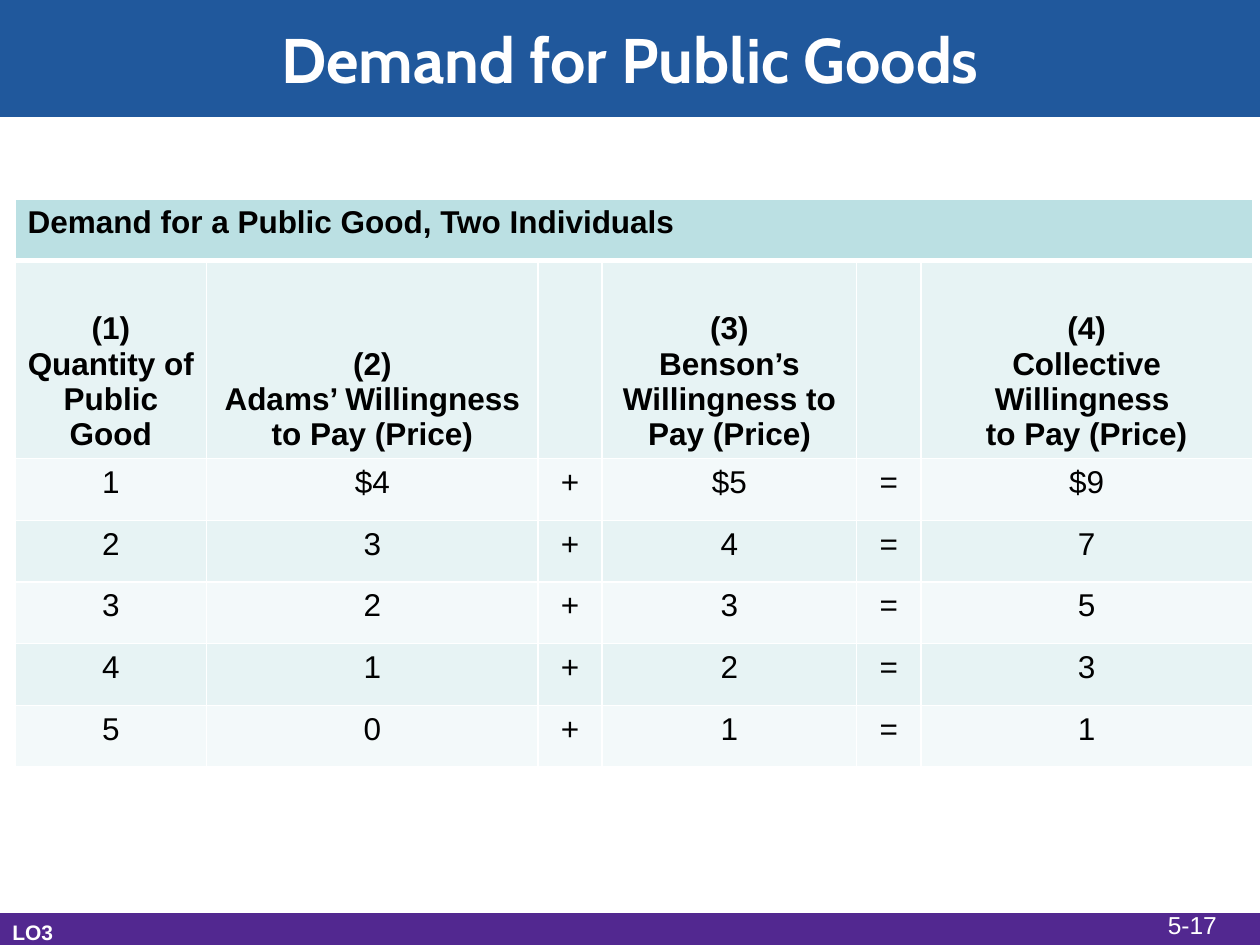
import pptx
import pptx.dml.color
import pptx.enum.shapes
import pptx.enum.text
import pptx.oxml
import pptx.oxml.ns
import pptx.util
from dataclasses import dataclass

Inches = pptx.util.Inches
Pt = pptx.util.Pt
Align = pptx.enum.text.PP_ALIGN
Anchor = pptx.enum.text.MSO_ANCHOR


@dataclass(frozen=True)
class Theme:
    title_font: str = "Cabin"
    body_font: str = "Arial"
    title_size: int = 36
    table_size: int = 18
    number_size: int = 14
    objective_size: int = 12
    title_band: str = "20589C"
    footer_band: str = "522890"
    caption_fill: str = "BBE0E3"
    dark_row: str = "E7F3F4"
    light_row: str = "F3F9FA"
    white: str = "FFFFFF"
    black: str = "000000"


THEME = Theme()
CAPTION = "Demand for a Public Good, Two Individuals"
HEADINGS = [
    "(1)\nQuantity of Public Good",
    "(2)\nAdams’ Willingness to Pay (Price)",
    "",
    "(3)\nBenson’s Willingness to Pay (Price)",
    "",
    "(4)\nCollective Willingness \nto Pay (Price)",
]
DEMAND = [
    ["1", "$4", "+", "$5", "=", "$9"],
    ["2", "3", "+", "4", "=", "7"],
    ["3", "2", "+", "3", "=", "5"],
    ["4", "1", "+", "2", "=", "3"],
    ["5", "0", "+", "1", "=", "1"],
]
COLUMN_WIDTHS = [1.52, 2.63, 0.51, 2.02, 0.51, 2.63]
ROW_HEIGHTS = [0.49, 1.57] + [0.49] * len(DEMAND)


def rgb(value):
    return pptx.dml.color.RGBColor.from_string(value)


def write_text(frame, text, size, color, font=THEME.body_font, bold=False, align=Align.LEFT):
    frame.text = text
    for paragraph in frame.paragraphs:
        paragraph.alignment = align
        paragraph.font.size = Pt(size)
        for run in paragraph.runs:
            run.font.name = font
            run.font.size = Pt(size)
            run.font.bold = bold
            run.font.color.rgb = rgb(color)


def add_band(slide, top, height, color):
    """Draw a full-width coloured strip."""
    band = slide.shapes.add_shape(
        pptx.enum.shapes.MSO_SHAPE.RECTANGLE, 0, Inches(top), Inches(10), Inches(height))
    band.shadow.inherit = False
    band.fill.solid()
    band.fill.fore_color.rgb = rgb(color)
    band.line.color.rgb = rgb(color)
    band.line.width = Pt(0.75)


def add_label(slide, box, text, size, wrap=False, anchor=Anchor.TOP, **style):
    frame = slide.shapes.add_textbox(*map(Inches, box)).text_frame
    frame.word_wrap = wrap
    frame.vertical_anchor = anchor
    write_text(frame, text, size, THEME.white, **style)


def set_borders(cell, top=1, bottom=1):
    """Rule all four sides in white; widths are in points."""
    properties = cell._tc.get_or_add_tcPr()
    for side, width in (("L", 1), ("R", 1), ("T", top), ("B", bottom)):
        properties.append(pptx.oxml.parse_xml(
            f'<a:ln{side} {pptx.oxml.ns.nsdecls("a")} w="{Pt(width)}">'
            f'<a:solidFill><a:srgbClr val="{THEME.white}"/></a:solidFill></a:ln{side}>'))


def fill_cell(cell, text, fill, top=1, bottom=1, anchor=Anchor.TOP, **style):
    set_borders(cell, top, bottom)
    cell.fill.solid()
    cell.fill.fore_color.rgb = rgb(fill)
    cell.vertical_anchor = anchor
    write_text(cell.text_frame, text, THEME.table_size, THEME.black, **style)


def add_demand_table(slide):
    table = slide.shapes.add_table(
        len(ROW_HEIGHTS), len(COLUMN_WIDTHS), Inches(0.12), Inches(1.58),
        Inches(sum(COLUMN_WIDTHS)), Inches(sum(ROW_HEIGHTS))).table
    table.first_row = table.horz_banding = False
    for column, width in zip(table.columns, COLUMN_WIDTHS):
        column.width = Inches(width)
    for row, height in zip(table.rows, ROW_HEIGHTS):
        row.height = Inches(height)

    table.cell(0, 0).merge(table.cell(0, len(COLUMN_WIDTHS) - 1))
    for cell in table.rows[0].cells:
        caption = "" if cell.is_spanned else CAPTION
        fill_cell(cell, caption, THEME.caption_fill, bottom=3, bold=True)
    for cell, heading in zip(table.rows[1].cells, HEADINGS):
        fill_cell(cell, heading, THEME.dark_row, top=3, anchor=Anchor.BOTTOM,
                  bold=True, align=Align.CENTER)
    for index, values in enumerate(DEMAND):
        fill = THEME.dark_row if index % 2 else THEME.light_row
        for cell, value in zip(table.rows[index + 2].cells, values):
            fill_cell(cell, value, fill, align=Align.CENTER)


def main():
    deck = pptx.Presentation()
    deck.slide_width, deck.slide_height = Inches(10), Inches(7.5)
    slide = deck.slides.add_slide(deck.slide_layouts[6])

    add_band(slide, 0, 0.92, THEME.title_band)
    add_label(slide, (0, 0, 10, 0.92), "Demand for Public Goods", THEME.title_size,
              wrap=True, anchor=Anchor.MIDDLE, font=THEME.title_font,
              bold=True, align=Align.CENTER)
    add_band(slide, 7.25, 0.25, THEME.footer_band)
    add_label(slide, (0, 7.25, 0.53, 0.3), "LO3", THEME.objective_size, bold=True)
    add_demand_table(slide)
    add_label(slide, (9.17, 7.17, 0.59, 0.33), "5-17", THEME.number_size)

    deck.save("out.pptx")


if __name__ == "__main__":
    main()
